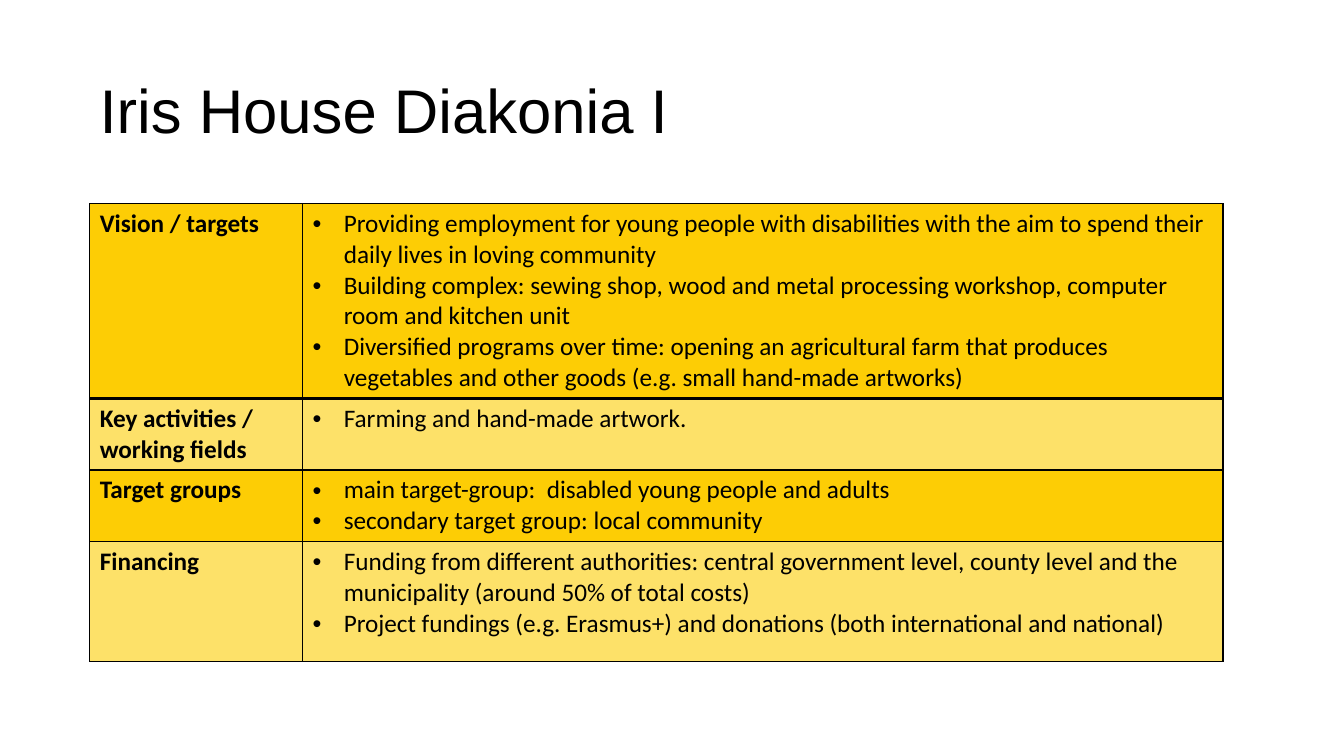
import pptx
import pptx.dml.color
import pptx.enum.text
import pptx.oxml.ns
import pptx.util
from lxml import etree
from pptx.util import Inches

COLORS = {"ink": "000000", "gold": "FDCD05"}

COLUMN_WIDTHS = [2.11, 9.13]
ROW_HEIGHTS = [1.74, 0.64, 0.67, 1.19]
PROFILE = [
    ("Vision / targets", [
        "Providing employment for young people with disabilities with the aim"
        " to spend their daily lives in loving community",
        "Building complex: sewing shop, wood and metal processing workshop,"
        " computer room and kitchen unit",
        "Diversified programs over time: opening an agricultural farm that"
        " produces vegetables and other goods (e.g. small hand-made artworks)",
    ]),
    ("Key activities / working fields", ["Farming and hand-made artwork."]),
    ("Target groups", [
        "main target-group:  disabled young people and adults",
        "secondary target group: local community",
    ]),
    ("Financing", [
        "Funding from different authorities: central government level, county"
        " level and the municipality (around 50% of total costs)",
        "Project fundings (e.g. Erasmus+) and donations (both international"
        " and national)",
    ]),
]


def rgb(name):
    return pptx.dml.color.RGBColor.from_string(COLORS[name])


def add_element(parent, tag, **attributes):
    element = etree.SubElement(parent, pptx.oxml.ns.qn(tag))
    for key, value in attributes.items():
        element.set(key, str(value))
    return element


def write(frame, lines, size=18, font="Calibri", bold=False, bullet=False,
          spacing=None):
    for index, line in enumerate(lines):
        paragraph = frame.paragraphs[0] if index == 0 else frame.add_paragraph()
        if bullet:
            properties = paragraph._p.get_or_add_pPr()
            indent = Inches(0.31)
            properties.set("marL", str(indent))
            properties.set("indent", str(-indent))
            add_element(properties, "a:buFont", typeface="Arial")
            add_element(properties, "a:buChar", char="•")
        if spacing:
            paragraph.line_spacing = spacing
        run = paragraph.add_run()
        run.text = line
        run.font.size = pptx.util.Pt(size)
        run.font.name = font
        run.font.bold = bold
        run.font.color.rgb = rgb("ink")


def set_borders(cell, **widths):
    properties = cell._tc.get_or_add_tcPr()
    for side in "LRTB":
        line = add_element(properties, f"a:ln{side}",
                           w=pptx.util.Pt(widths.get(side, 1)))
        fill = add_element(line, "a:solidFill")
        add_element(fill, "a:srgbClr", val=COLORS["ink"])


def fill_cell(cell, opacity):
    cell.fill.solid()
    cell.fill.fore_color.rgb = rgb("gold")
    if opacity < 100:
        color = cell._tc.tcPr.find(
            pptx.oxml.ns.qn("a:solidFill") + "/" + pptx.oxml.ns.qn("a:srgbClr"))
        add_element(color, "a:alpha", val=opacity * 1000)


def add_title(slide, text):
    title = slide.shapes.add_textbox(
        Inches(0.89), Inches(0.4), Inches(10.7), Inches(1.45))
    title.text_frame.word_wrap = True
    title.text_frame.vertical_anchor = pptx.enum.text.MSO_ANCHOR.MIDDLE
    write(title.text_frame, [text], size=44, font="Arial", spacing=0.9)


def add_profile_table(slide):
    table = slide.shapes.add_table(
        len(PROFILE), len(COLUMN_WIDTHS), Inches(0.89), Inches(2.02),
        Inches(sum(COLUMN_WIDTHS)), Inches(sum(ROW_HEIGHTS))).table
    for column, width in zip(table.columns, COLUMN_WIDTHS):
        column.width = Inches(width)
    for index, (topic, points) in enumerate(PROFILE):
        row = table.rows[index]
        row.height = Inches(ROW_HEIGHTS[index])
        for cell in row.cells:
            # The rule below the first row is heavier
            set_borders(cell, T=2 if index == 1 else 1, B=2 if index == 0 else 1)
            fill_cell(cell, 60 if index % 2 else 100)
        topic_cell, points_cell = row.cells
        write(topic_cell.text_frame, [topic], bold=True)
        write(points_cell.text_frame, points, bullet=True)


def main():
    deck = pptx.Presentation()
    deck.slide_width, deck.slide_height = Inches(13.33), Inches(7.5)
    slide = deck.slides.add_slide(deck.slide_layouts[6])
    # Table of the project profile
    add_profile_table(slide)
    # Heading
    add_title(slide, "Iris House Diakonia I")
    deck.save("out.pptx")


if __name__ == "__main__":
    main()
